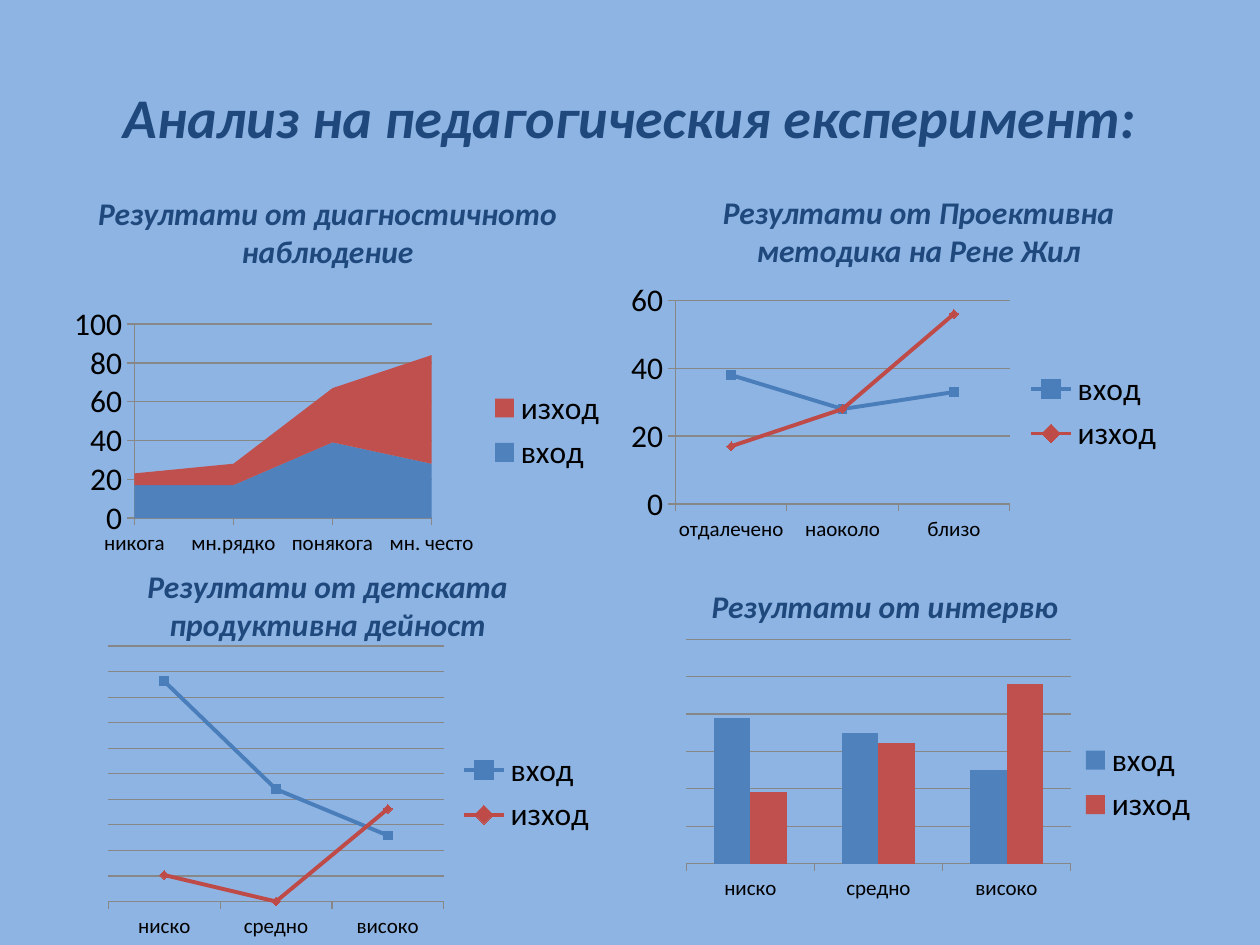
from lxml import etree
from pptx import Presentation
from pptx.chart.data import CategoryChartData
from pptx.dml.color import RGBColor
from pptx.enum.chart import XL_CHART_TYPE, XL_LEGEND_POSITION, XL_MARKER_STYLE, XL_TICK_MARK
from pptx.enum.text import MSO_ANCHOR, PP_ALIGN
from pptx.oxml.ns import qn
from pptx.util import Inches, Pt

AREA = XL_CHART_TYPE.AREA_STACKED
LINE = XL_CHART_TYPE.LINE_MARKERS
COLUMN = XL_CHART_TYPE.COLUMN_CLUSTERED
RIGHT = XL_LEGEND_POSITION.RIGHT
OUTSIDE, NO_TICK = XL_TICK_MARK.OUTSIDE, XL_TICK_MARK.NONE
MARKERS = (XL_MARKER_STYLE.SQUARE, XL_MARKER_STYLE.DIAMOND)
CENTER, LEFT = PP_ALIGN.CENTER, PP_ALIGN.LEFT
MIDDLE, BOTTOM, TOP = MSO_ANCHOR.MIDDLE, MSO_ANCHOR.BOTTOM, MSO_ANCHOR.TOP

FONT = "Calibri"
BACKGROUND, HEADING, GRID, BLACK = "8EB4E3", "1F497D", "878787", "000000"
FILLS = ("4F81BD", "C0504D")
STROKES = ("4A7EBB", "BE4B48")
LEVELS = ("ниско", "средно", "високо")


def color(value):
    return RGBColor.from_string(value)


def add_text(slide, box, text, size=18, anchor=BOTTOM, align=CENTER, before=3.6, wrap=True):
    frame = slide.shapes.add_textbox(*map(Inches, box)).text_frame
    frame.word_wrap = wrap
    frame.vertical_anchor = anchor
    paragraph = frame.paragraphs[0]
    paragraph.alignment = align
    paragraph.space_before = Pt(before)
    run = paragraph.add_run()
    run.text = text
    run.font.name, run.font.size = FONT, Pt(size)
    run.font.bold = run.font.italic = True
    run.font.color.rgb = color(HEADING)


def style_line(line, value, width=0.75):
    line.color.rgb = color(value)
    line.width = Pt(width)


def style_axes(chart, top, step, scale_shown):
    categories, values = chart.category_axis, chart.value_axis
    categories.major_tick_mark = OUTSIDE
    categories.minor_tick_mark = NO_TICK
    categories.has_major_gridlines = False
    categories.tick_labels.font.size = Pt(12)
    style_line(categories.format.line, GRID)
    values.minimum_scale, values.maximum_scale, values.major_unit = 0, top, step
    values.major_tick_mark = OUTSIDE
    values.minor_tick_mark = NO_TICK
    values.has_major_gridlines = True
    values.visible = scale_shown
    style_line(values.major_gridlines.format.line, GRID)
    style_line(values.format.line, GRID)


def style_series(chart, kind):
    for series, fill, stroke, marker in zip(chart.plots[0].series, FILLS, STROKES, MARKERS):
        if kind == LINE:
            series.smooth = False
            style_line(series.format.line, stroke, 2.25)
            series.marker.style, series.marker.size = marker, 5
            series.marker.format.fill.solid()
            series.marker.format.fill.fore_color.rgb = color(fill)
            style_line(series.marker.format.line, stroke)
        else:
            series.format.fill.solid()
            series.format.fill.fore_color.rgb = color(fill)


def place_plot(chart, bounds):
    area = chart.plots[0]._element.getparent()
    for old in area.findall(qn("c:layout")):
        area.remove(old)
    layout = etree.Element(qn("c:layout"))
    manual = etree.SubElement(layout, qn("c:manualLayout"))
    settings = [("layoutTarget", "inner"), ("xMode", "edge"), ("yMode", "edge"), *zip("xywh", bounds)]
    for tag, value in settings:
        etree.SubElement(manual, qn(f"c:{tag}")).set("val", str(value))
    area.insert(0, layout)


def add_result_chart(slide, box, kind, categories, before, after, top, step,
                     scale_shown=True, plot_bounds=None):
    data = CategoryChartData()
    data.categories = categories
    data.add_series("вход", before)
    data.add_series("изход", after)
    chart = slide.shapes.add_chart(kind, *map(Inches, box), data).chart
    chart.has_title = False
    chart.font.name, chart.font.size = FONT, Pt(18)
    chart.font.color.rgb = color(BLACK)
    chart.has_legend = True
    chart.legend.position = RIGHT
    chart.legend.include_in_layout = False
    chart.plots[0].vary_by_categories = False
    if kind == COLUMN:
        chart.plots[0].gap_width = 150
    style_axes(chart, top, step, scale_shown)
    style_series(chart, kind)
    if plot_bounds:
        place_plot(chart, plot_bounds)


def add_headings(slide):
    add_text(slide, (0.5, 0.3, 9, 1.25), "Анализ на педагогическия експеримент:",
             size=32, anchor=MIDDLE, before=0)
    add_text(slide, (0.39, 1.41, 4.42, 0.78), "Резултати от диагностичното наблюдение")
    add_text(slide, (5.08, 1.48, 4.42, 0.7), "Резултати от Проективна методика на Рене Жил")
    add_text(slide, (0.39, 4.45, 4.42, 0.7), "Резултати от детската продуктивна дейност")
    add_text(slide, (5.55, 4.61, 3.05, 0.4), "Резултати от интервю",
             anchor=TOP, align=LEFT, before=0, wrap=False)


def add_charts(slide):
    add_result_chart(slide, (0.5, 2.38, 4.42, 2.07), AREA,
                     ("никога", "мн.рядко", "понякога", "мн. често"),
                     (17, 17, 39, 28), (6, 11, 28, 56), 100, 20)
    add_result_chart(slide, (4.92, 2.19, 4.42, 2.15), LINE,
                     ("отдалечено", "наоколо", "близо"),
                     (38, 28, 33), (17, 28, 56), 60, 20)
    add_result_chart(slide, (0.78, 5.08, 4.06, 2.42), LINE, LEVELS,
                     (100, 51, 30), (12, 0, 42), 116, 11.6, scale_shown=False)
    add_result_chart(slide, (4.77, 4.92, 4.84, 2.58), COLUMN, LEVELS,
                     (81, 73, 52), (40, 67, 100), 125, 125 / 6, scale_shown=False,
                     plot_bounds=(0.14, 0.06, 0.63, 0.69))


def main():
    presentation = Presentation()
    presentation.slide_width, presentation.slide_height = Inches(10), Inches(7.5)
    slide = presentation.slides.add_slide(presentation.slide_layouts[6])
    slide.background.fill.solid()
    slide.background.fill.fore_color.rgb = color(BACKGROUND)
    add_headings(slide)
    add_charts(slide)
    presentation.save("out.pptx")


if __name__ == "__main__":
    main()
